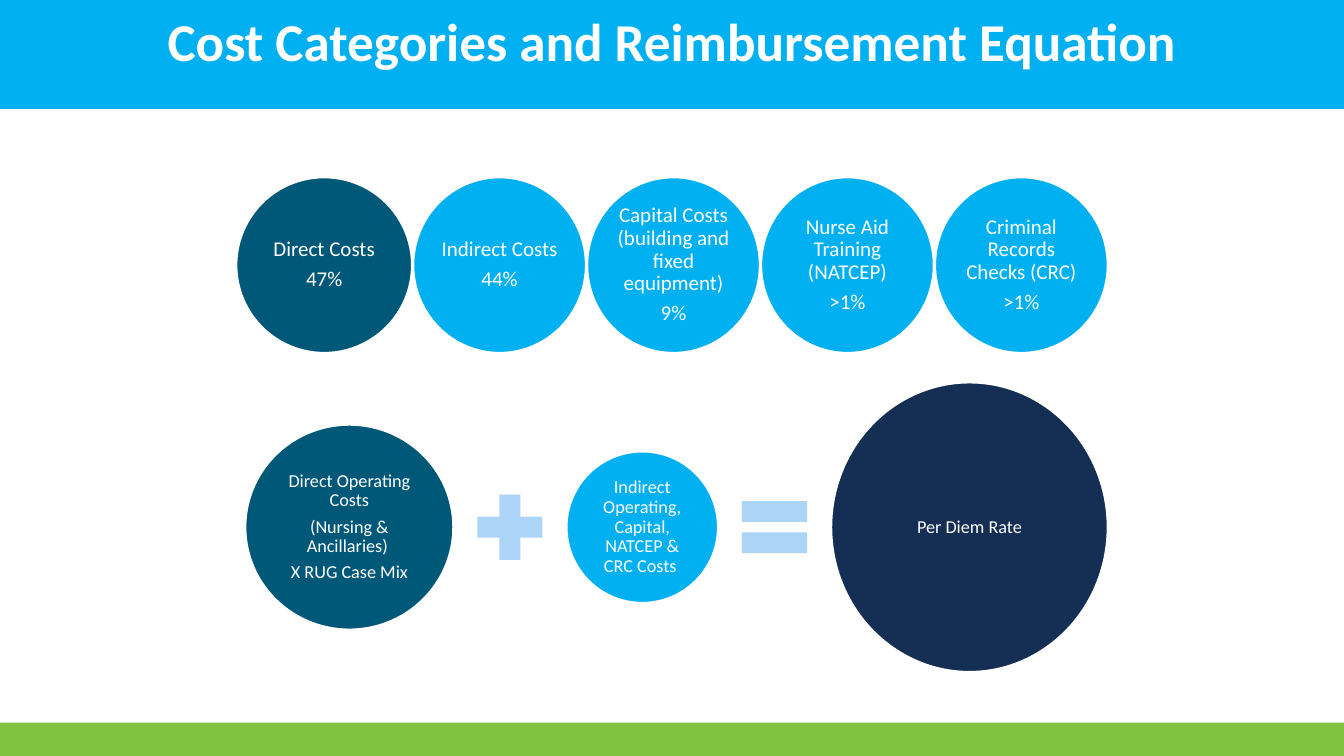
from dataclasses import dataclass

from lxml import etree
from pptx import Presentation
from pptx.dml.color import RGBColor
from pptx.enum.shapes import MSO_SHAPE
from pptx.enum.text import MSO_ANCHOR, PP_ALIGN
from pptx.oxml.ns import qn
from pptx.util import Inches, Pt

OVAL, RECT = MSO_SHAPE.OVAL, MSO_SHAPE.RECTANGLE
PLUS, EQUAL = MSO_SHAPE.MATH_PLUS, MSO_SHAPE.MATH_EQUAL
TOP, MIDDLE = MSO_ANCHOR.TOP, MSO_ANCHOR.MIDDLE
CENTER = PP_ALIGN.CENTER


@dataclass(frozen=True)
class Theme:
    font: str = "Calibri"
    white: str = "FFFFFF"
    sky: str = "00B0F0"
    teal: str = "005878"
    navy: str = "152E54"
    pale: str = "ABD4F6"
    green: str = "81C341"
    title: float = 38
    cost: float = 15
    term: float = 13


THEME = Theme()


@dataclass(frozen=True)
class Item:
    width: float
    height: float
    fill: str
    lines: tuple[str, ...] = ()
    kind: int = OVAL


COSTS = [
    Item(1.75, 1.75, THEME.teal, ("Direct Costs", "47%")),
    *(Item(1.72, 1.75, THEME.sky, lines) for lines in (
        ("Indirect Costs", "44%"),
        ("Capital Costs (building and fixed equipment)", "9%"),
        ("Nurse Aid Training (NATCEP)", ">1%"),
        ("Criminal Records Checks (CRC)", ">1%"),
    )),
]

TERMS = [
    Item(2.07, 2.04, THEME.teal, ("Direct Operating Costs",
                                  "(Nursing & Ancillaries) ", "X RUG Case Mix")),
    Item(0.88, 0.88, THEME.pale, kind=PLUS),
    Item(1.51, 1.51, THEME.sky,
         ("Indirect Operating, Capital, NATCEP & CRC Costs ",)),
    Item(0.88, 0.88, THEME.pale, kind=EQUAL),
    Item(2.75, 2.88, THEME.navy, ("Per Diem Rate",)),
]


def write(shape, lines: tuple[str, ...], *, size: float, bold: bool = False,
          inset: float = 0, anchor: int = MIDDLE, pitch: float = 0.9,
          after: float = 0.35) -> None:
    frame = shape.text_frame
    frame.word_wrap = True
    frame.vertical_anchor = anchor
    frame.margin_left = frame.margin_right = Inches(inset)
    frame.margin_top = frame.margin_bottom = Inches(inset)
    for i, line in enumerate(lines):
        para = frame.add_paragraph() if i else frame.paragraphs[0]
        para.alignment = CENTER
        para.line_spacing = pitch
        para.space_before = Pt(0)
        para.space_after = Pt(after * size)
        run = para.add_run()
        run.text = line
        run.font.name = THEME.font
        run.font.size = Pt(size)
        run.font.bold = bold
        run.font.color.rgb = RGBColor.from_string(THEME.white)


def draw(slide, kind: int, left: float, top: float, width: float,
         height: float, fill: str):
    shape = slide.shapes.add_shape(
        kind, Inches(left), Inches(top), Inches(width), Inches(height))
    shape.shadow.inherit = False
    shape.fill.solid()
    shape.fill.fore_color.rgb = RGBColor.from_string(fill)
    if kind == OVAL:
        shape.line.color.rgb = RGBColor.from_string(THEME.white)
        shape.line.width = Pt(2)
    else:
        shape.line.fill.background()
    return shape


def add_row(slide, items: list[Item], left: float, right: float,
            middle: float, size: float, inset: float) -> None:
    """Spread the items evenly from left to right on one centre line."""
    gap = (right - left - sum(i.width for i in items)) / (len(items) - 1)
    for item in items:
        shape = draw(slide, item.kind, left, middle - item.height / 2,
                     item.width, item.height, item.fill)
        if item.lines:
            write(shape, item.lines, size=size, inset=inset)
        left += item.width + gap


def add_glow(run) -> None:
    """Give the title letters a soft dark shadow."""
    props = run.font._element
    effects = etree.Element(qn("a:effectLst"))
    shade = etree.SubElement(effects, qn("a:outerShdw"), blurRad="38100",
                             dist="38100", dir="2700000", algn="tl")
    color = etree.SubElement(shade, qn("a:srgbClr"), val="000000")
    etree.SubElement(color, qn("a:alpha"), val="43000")
    props.find(qn("a:solidFill")).addnext(effects)


def main() -> None:
    deck = Presentation()
    deck.slide_width, deck.slide_height = Inches(13.33), Inches(7.5)
    slide = deck.slides.add_slide(deck.slide_layouts[5])

    # Bands, moved behind the title
    for top, height, fill in ((0, 1.08, THEME.sky), (7.17, 0.33, THEME.green)):
        band = draw(slide, RECT, 0, top, 13.33, height, fill)
        slide.shapes._spTree.insert(2, band._element)

    # Title
    title = slide.shapes.title
    title.left, title.top = Inches(0), Inches(0)
    title.width, title.height = Inches(13.33), Inches(1.08)
    write(title, ("Cost Categories and Reimbursement Equation",),
          size=THEME.title, bold=True, inset=0.08, anchor=TOP,
          pitch=1.0, after=0)
    add_glow(title.text_frame.paragraphs[0].runs[0])

    # Cost categories, then the equation
    add_row(slide, COSTS, 2.34, 10.99, 2.63, THEME.cost, 0)
    add_row(slide, TERMS, 2.43, 10.99, 5.23, THEME.term, 0.02)

    deck.save("out.pptx")


if __name__ == "__main__":
    main()
